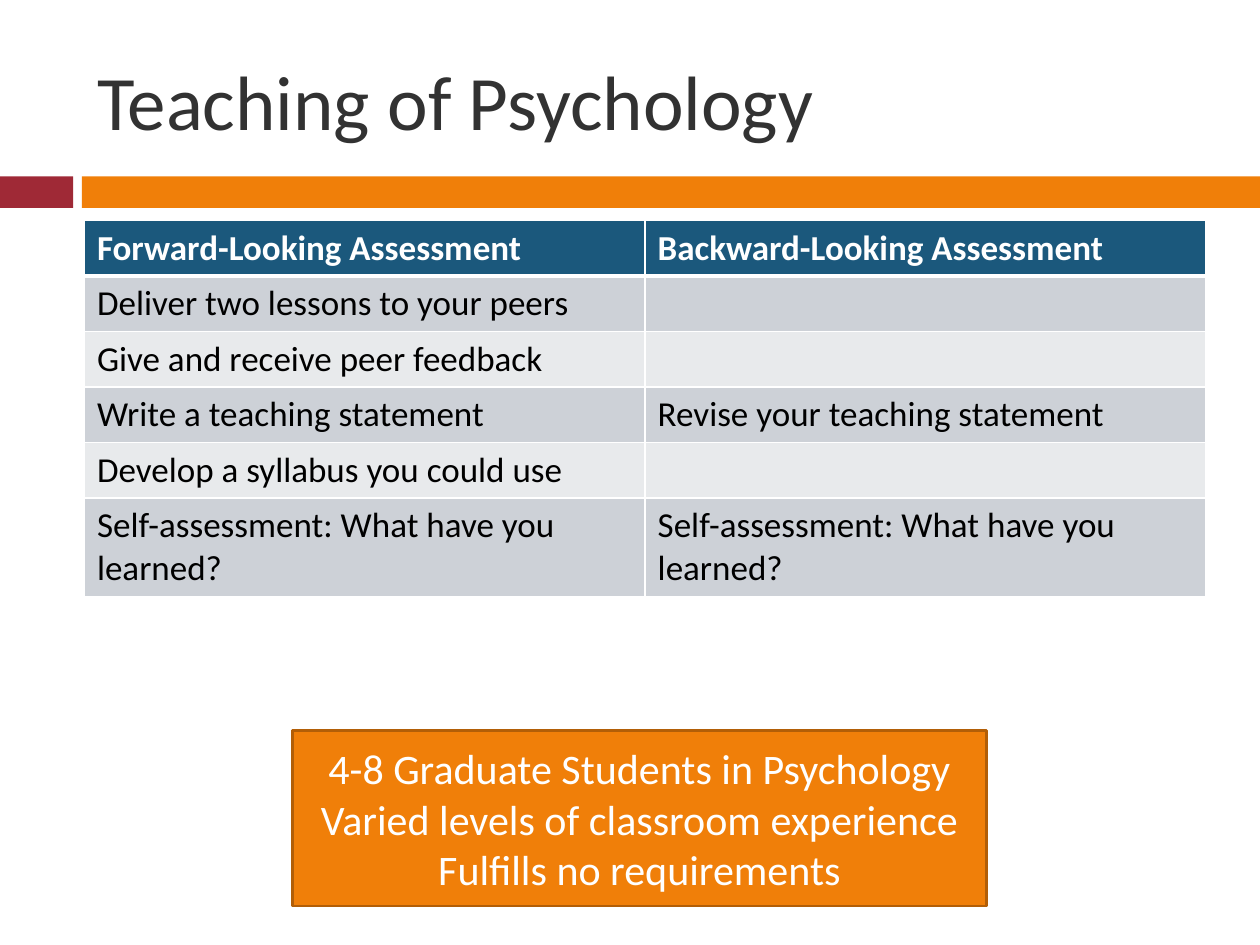
import pptx
import pptx.util
import pptx.dml.color
import pptx.enum.shapes
import pptx.enum.text
import pptx.oxml
import pptx.oxml.ns

WIDE, HIGH = 10, 7.5
FONT = "Calibri"
HUES = {
    "red": "9F2936", "orange": "F07F09", "edge": "B25E07", "blue": "1B587C",
    "dark": "CDD1D7", "light": "E8EAEC", "white": "FFFFFF",
    "black": "000000", "title": "323232",
}
TITLE = "Teaching of Psychology"
ROWS = [
    ("Forward-Looking Assessment", "Backward-Looking Assessment"),
    ("Deliver two lessons to your peers", ""),
    ("Give and receive peer feedback", ""),
    ("Write a teaching statement", "Revise your teaching statement"),
    ("Develop a syllabus you could use", ""),
    ("Self-assessment: What have you learned?",) * 2,
]
NOTES = [
    "4-8 Graduate Students in Psychology",
    "Varied levels of classroom experience",
    "Fulfills no requirements",
]
LEFT, COL = 0.67, 4.45
LINE, PAD = 0.34, 0.1  # height of a table text line, cell margins
BAR_TOP, BAR_HIGH = 1.4, 0.25
SPLIT, GAP = 0.58, 0.07

Inch = pptx.util.Inches
Pt = pptx.util.Pt
MIDDLE = pptx.enum.text.MSO_ANCHOR.MIDDLE


def tint(name):
    return pptx.dml.color.RGBColor.from_string(HUES[name])


def write(frame, lines, size, hue, bold=False, align=None):
    for i, line in enumerate(lines):
        para = frame.paragraphs[0] if i == 0 else frame.add_paragraph()
        para.alignment = align
        run = para.add_run()
        run.text = line
        font = run.font
        font.name, font.size, font.bold = FONT, Pt(size), bold
        font.color.rgb = tint(hue)


def block(slide, left, top, width, height, hue, edge=None):
    """Add a flat rectangle, outlined only if an edge hue is given."""
    kind = pptx.enum.shapes.MSO_SHAPE.RECTANGLE
    box = slide.shapes.add_shape(kind, *map(Inch, (left, top, width, height)))
    box.shadow.inherit = False
    box.fill.solid()
    box.fill.fore_color.rgb = tint(hue)
    if edge:
        box.line.color.rgb = tint(edge)
        box.line.width = Pt(1.5)
    else:
        box.line.fill.background()
    return box


def rule(cell, widths):
    """Draw white borders; widths maps a side (L, R, T, B) to points."""
    props = cell._tc.get_or_add_tcPr()
    space = pptx.oxml.ns.nsdecls("a")
    for side, width in widths.items():
        props.append(pptx.oxml.parse_xml(
            f'<a:ln{side} {space} w="{Pt(width)}"><a:solidFill>'
            f'<a:srgbClr val="{HUES["white"]}"/></a:solidFill></a:ln{side}>'))


def grid(slide):
    highs = [LINE + PAD] * (len(ROWS) - 1) + [2 * LINE + PAD]
    frame = slide.shapes.add_table(
        len(ROWS), 2, Inch(LEFT), Inch(1.75), Inch(2 * COL), Inch(sum(highs)))
    table = frame.table
    for col in table.columns:
        col.width = Inch(COL)
    for r, (texts, high) in enumerate(zip(ROWS, highs)):
        table.rows[r].height = Inch(high)
        head = r == 0
        fill = "blue" if head else ("light", "dark")[r % 2]
        for c, text in enumerate(texts):
            cell = table.cell(r, c)
            rule(cell, {"L": 1, "R": 1, "T": 3 if r == 1 else 1,
                        "B": 3 if head else 1})
            cell.fill.solid()
            cell.fill.fore_color.rgb = tint(fill)
            if text:
                write(cell.text_frame, [text], 20,
                      "white" if head else "black", head)


def main():
    deck = pptx.Presentation()
    deck.slide_width, deck.slide_height = Inch(WIDE), Inch(HIGH)
    slide = deck.slides.add_slide(deck.slide_layouts[5])

    block(slide, 0, BAR_TOP, SPLIT, BAR_HIGH, "red")
    start = SPLIT + GAP
    block(slide, start, BAR_TOP, WIDE - start, BAR_HIGH, "orange")

    title = slide.shapes.title
    title.left, title.top = Inch(LEFT), Inch(0.25)
    title.width, title.height = Inch(8.92), Inch(1.08)
    title.text_frame.vertical_anchor = MIDDLE
    write(title.text_frame, [TITLE], 44, "title",
          align=pptx.enum.text.PP_ALIGN.LEFT)

    grid(slide)

    note = block(slide, 2.32, 5.8, 5.51, 1.39, "orange", "edge")
    note.text_frame.vertical_anchor = MIDDLE
    write(note.text_frame, NOTES, 24, "white",
          align=pptx.enum.text.PP_ALIGN.CENTER)

    deck.save("out.pptx")


if __name__ == "__main__":
    main()
